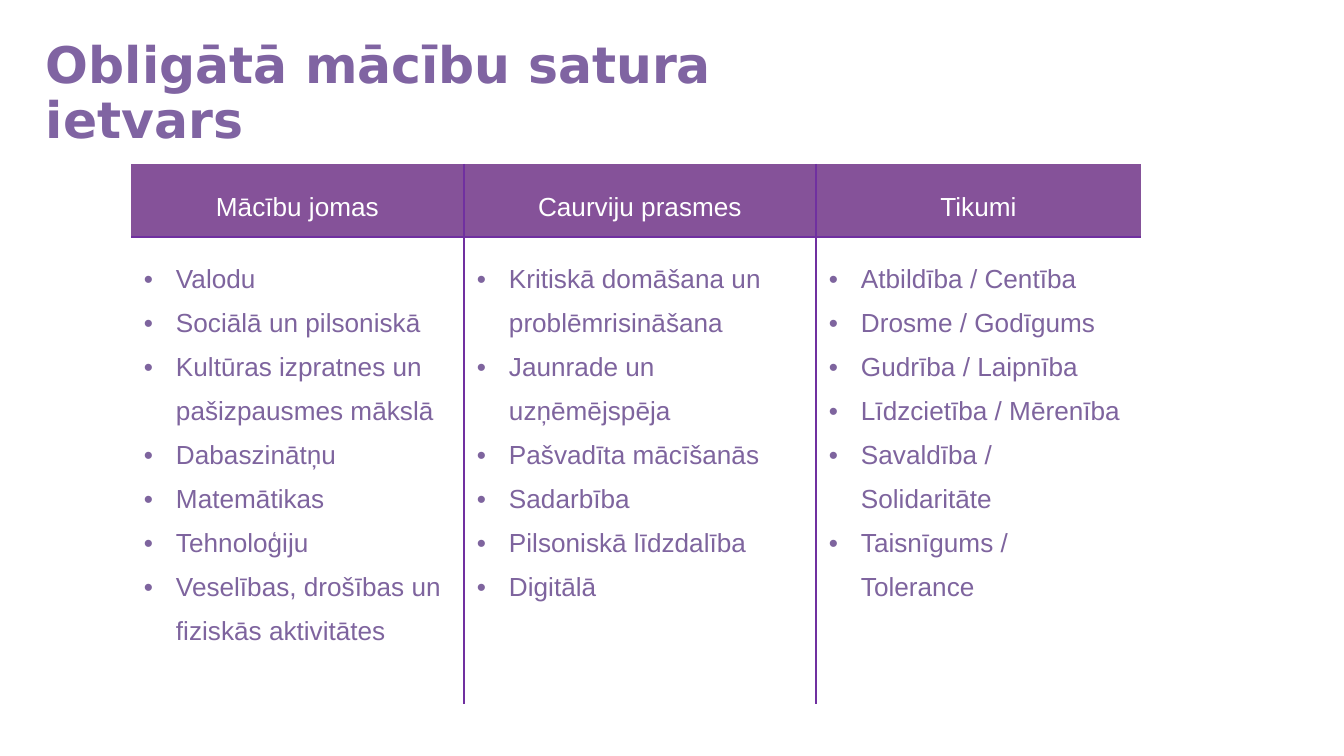
from dataclasses import dataclass

from lxml.etree import SubElement
from pptx import Presentation
from pptx.dml.color import RGBColor
from pptx.enum.text import MSO_ANCHOR, MSO_AUTO_SIZE, PP_ALIGN
from pptx.oxml import parse_xml
from pptx.oxml.ns import nsdecls, qn
from pptx.util import Emu, Pt


@dataclass(frozen=True)
class Theme:
    title_color: str = "8064A2"
    header_fill: str = "855299"
    header_text: str = "FFFFFF"
    body_text: str = "7E649E"
    rule: str = "7030A0"
    title_font: str = "DejaVu Sans"
    table_font: str = "Arial"
    title_size: int = 27
    table_size: int = 14
    rule_width: int = 1


THEME = Theme()
EMU_PER_PX = 914400 / 134.4
SLIDE_SIZE = (1344, 756)
TITLE_BOX = (36, 35, 706, 106)
TABLE_BOX = (131, 164, 1010, 540)
COLUMN_WIDTHS = (333, 352, 325)
HEADER_HEIGHT = 73
CELL_INSET = 13
BULLET_INDENT = 32
BULLET_HANGING = -35

TITLE = "Obligātā mācību satura ietvars"
COLUMNS = {
    "Mācību jomas": [
        "Valodu",
        "Sociālā un pilsoniskā",
        "Kultūras izpratnes un pašizpausmes mākslā",
        "Dabaszinātņu",
        "Matemātikas",
        "Tehnoloģiju",
        "Veselības, drošības un fiziskās aktivitātes",
    ],
    "Caurviju prasmes": [
        "Kritiskā domāšana un problēmrisināšana",
        "Jaunrade un uzņēmējspēja",
        "Pašvadīta mācīšanās",
        "Sadarbība",
        "Pilsoniskā līdzdalība",
        "Digitālā",
    ],
    "Tikumi": [
        "Atbildība / Centība",
        "Drosme / Godīgums",
        "Gudrība / Laipnība",
        "Līdzcietība / Mērenība",
        "Savaldība / Solidaritāte",
        "Taisnīgums / Tolerance",
    ],
}


def px(length):
    return Emu(round(length * EMU_PER_PX))


def apply(target, values):
    for name, value in values.items():
        setattr(target, name, value)


def format_para(para, color, para_format, font_format):
    apply(para, para_format)
    for span in para.runs:
        apply(span.font, font_format)
        span.font.color.rgb = RGBColor.from_string(color)


def add_bullet(para):
    properties = para._p.get_or_add_pPr()
    properties.set("marL", str(px(BULLET_INDENT)))
    properties.set("indent", str(px(BULLET_HANGING)))
    bullet_color = SubElement(properties, qn("a:buClr"))
    SubElement(bullet_color, qn("a:srgbClr"), val=THEME.body_text)
    SubElement(properties, qn("a:buFont"), typeface=THEME.table_font)
    SubElement(properties, qn("a:buChar"), char="•")


def set_borders(cell, ruled_sides):
    properties = cell._tc.get_or_add_tcPr()
    for position, side in enumerate("LRTB"):
        paint = "<a:noFill/>"
        if side in ruled_sides:
            paint = f'<a:solidFill><a:srgbClr val="{THEME.rule}"/></a:solidFill>'
        line = parse_xml(
            f'<a:ln{side} {nsdecls("a")} w="{Pt(THEME.rule_width)}">{paint}</a:ln{side}>'
        )
        properties.insert(position, line)


def fill_cell(cell, lines, is_header):
    margins = ("margin_left", "margin_top", "margin_right", "margin_bottom")
    apply(cell, dict.fromkeys(margins, px(CELL_INSET)))
    cell.vertical_anchor = MSO_ANCHOR.MIDDLE if is_header else MSO_ANCHOR.TOP
    if is_header:
        cell.fill.solid()
        cell.fill.fore_color.rgb = RGBColor.from_string(THEME.header_fill)
    else:
        cell.fill.background()
    cell.text = "\n".join(lines)
    color = THEME.header_text if is_header else THEME.body_text
    para_format = {
        "alignment": PP_ALIGN.CENTER if is_header else PP_ALIGN.LEFT,
        "line_spacing": 1.5,
    }
    font_format = {"name": THEME.table_font, "size": Pt(THEME.table_size), "bold": False}
    for para in cell.text_frame.paragraphs:
        format_para(para, color, para_format, font_format)
        if not is_header:
            add_bullet(para)


def place_title(page, box):
    title = page.shapes.title
    apply(title, dict(zip(("left", "top", "width", "height"), map(px, box))))
    frame = title.text_frame
    frame.text = TITLE
    apply(frame, {
        "word_wrap": True,
        "auto_size": MSO_AUTO_SIZE.NONE,
        "vertical_anchor": MSO_ANCHOR.TOP,
        "margin_left": px(10),
        "margin_right": px(10),
        "margin_top": px(5),
        "margin_bottom": px(5),
    })
    format_para(
        frame.paragraphs[0],
        THEME.title_color,
        {"alignment": PP_ALIGN.LEFT, "line_spacing": 0.9},
        {"name": THEME.title_font, "size": Pt(THEME.title_size), "bold": True},
    )


def place_table(page, box):
    table = page.shapes.add_table(2, len(COLUMNS), *map(px, box)).table
    apply(table, {"first_row": False, "horz_banding": False})
    row_heights = (HEADER_HEIGHT, box[3] - HEADER_HEIGHT)
    for row, height in zip(table.rows, row_heights):
        row.height = px(height)
    last = len(COLUMNS) - 1
    for index, (heading, items) in enumerate(COLUMNS.items()):
        table.columns[index].width = px(COLUMN_WIDTHS[index])
        sides = ("L" if index > 0 else "") + ("R" if index < last else "")
        header, body = table.cell(0, index), table.cell(1, index)
        fill_cell(header, [heading], True)
        fill_cell(body, items, False)
        set_borders(header, sides + "B")
        set_borders(body, sides + "T")


def main():
    deck = Presentation()
    deck.slide_width, deck.slide_height = map(px, SLIDE_SIZE)
    page = deck.slides.add_slide(deck.slide_layouts.get_by_name("Title Only"))
    place_title(page, TITLE_BOX)
    place_table(page, TABLE_BOX)
    deck.save("out.pptx")


if __name__ == "__main__":
    main()
